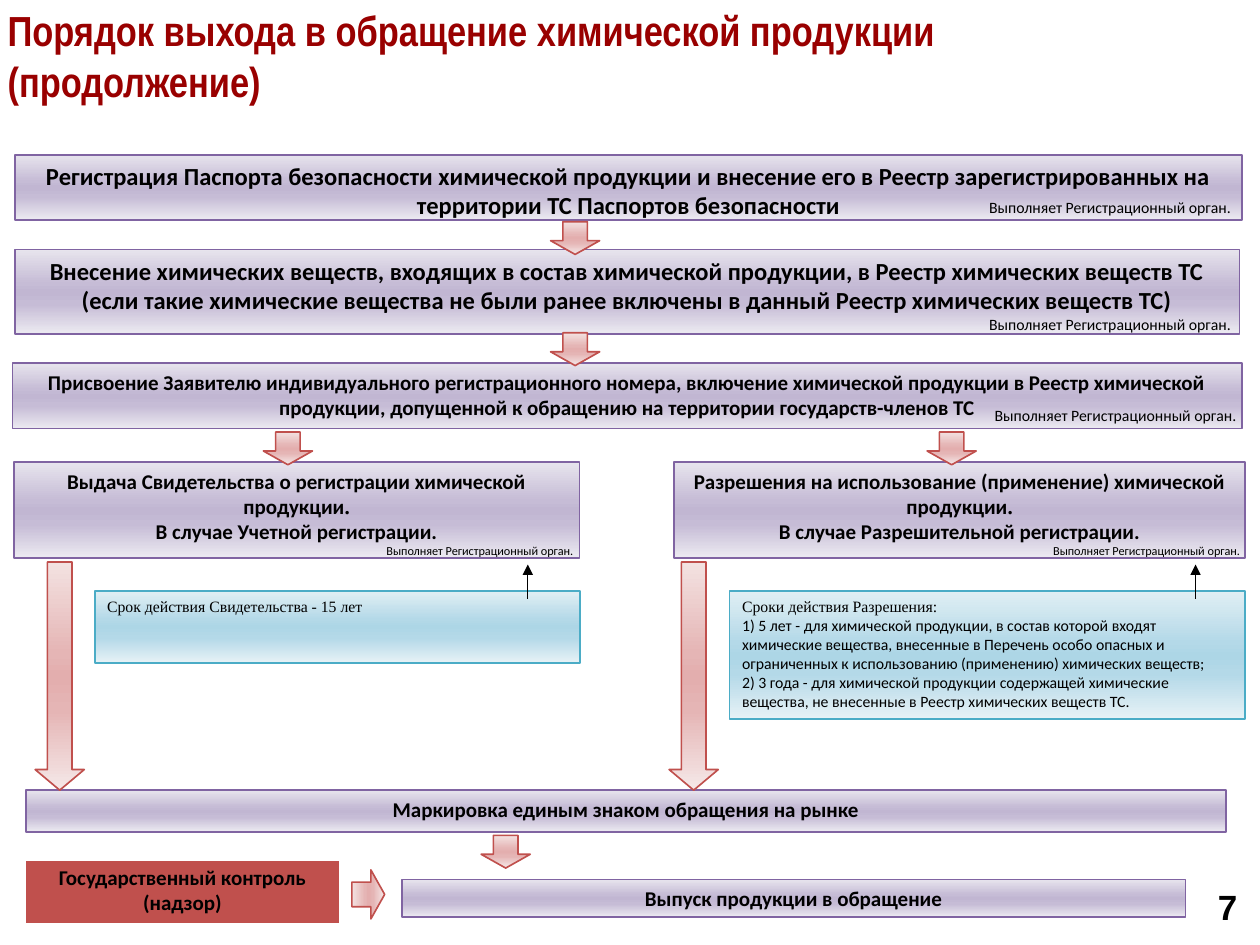
from lxml.etree import SubElement
from pptx import Presentation
from pptx.dml.color import RGBColor
from pptx.enum.shapes import MSO_CONNECTOR, MSO_SHAPE
from pptx.enum.text import MSO_ANCHOR, PP_ALIGN
from pptx.oxml.ns import qn
from pptx.util import Cm, Pt

COLORS = {
    "title": "990000", "text": "000000", "white": "FFFFFF",
    "purple": "8064A2", "red": "C0504D", "blue": "4BACC6",
}
GRADIENTS = {
    "purple": ["E7E4ED", "C6BCD6", "C1B6D2", "C6BCD6", "ECEAF1"],
    "red": ["F3E2E1", "E5B5B5", "E3AEAE", "E5B5B5", "F5E8E8"],
    "blue": ["E1EFF4", "B4D9E8", "ADD6E6", "B4D9E8", "E7F2F6"],
}
STOPS = [0, 40, 50, 65, 100]

deck = Presentation()
deck.slide_width, deck.slide_height = Cm(25.4), Cm(19.05)
page = deck.slides.add_slide(deck.slide_layouts[5])


def add_gradient_shape(kind, place, theme):
    """Add a preset shape with a vertical five-stop gradient and a matching outline."""
    shape = page.shapes.add_shape(kind, *[Cm(value) for value in place])
    shape.shadow.inherit = False
    shape.line.color.rgb = RGBColor.from_string(COLORS[theme])
    shape.line.width = Pt(0.94)
    shape.fill.gradient()
    shape.fill.gradient_angle = 270
    stop_list = shape._element.spPr.find(qn("a:gradFill")).find(qn("a:gsLst"))
    for old_stop in list(stop_list):
        stop_list.remove(old_stop)
    for position, color in zip(STOPS, GRADIENTS[theme]):
        stop = SubElement(stop_list, qn("a:gs"), pos=str(position * 1000))
        SubElement(stop, qn("a:srgbClr"), val=color)
    return shape


def write(shape, paragraphs, size, bold=False, align=PP_ALIGN.CENTER, after=0):
    """Fill a shape with paragraphs, each a list of (text, font name) runs."""
    frame = shape.text_frame
    frame.word_wrap = True
    frame.vertical_anchor = MSO_ANCHOR.TOP
    for index, runs in enumerate(paragraphs):
        para = frame.add_paragraph() if index else frame.paragraphs[0]
        para.alignment = align
        para.space_after = Pt(after)
        for text, font_name in runs:
            span = para.add_run()
            span.text = text
            span.font.name = font_name
            span.font.size = Pt(size)
            span.font.bold = bold
            span.font.color.rgb = RGBColor.from_string(COLORS["text"])


# Title
title = page.shapes.title
title.left, title.top, title.width, title.height = Cm(-0.1), Cm(-0.08), Cm(19.48), Cm(2.39)
title.text_frame.word_wrap = True
title.text_frame.vertical_anchor = MSO_ANCHOR.MIDDLE
para = title.text_frame.paragraphs[0]
para.alignment = PP_ALIGN.LEFT
for index, text in enumerate(["Порядок выхода в обращение химической продукции", "(продолжение)"]):
    if index:
        para.add_line_break()
    span = para.add_run()
    span.text = text
    span.font.name = "Arial Narrow"
    span.font.size = Pt(24)
    span.font.bold = True
    span.font.color.rgb = RGBColor.from_string(COLORS["title"])

# Steps of the procedure
steps = [
    ((0.3, 3.12, 24.74, 1.32), 14,
     "Регистрация Паспорта безопасности химической продукции и внесение его в Реестр "
     "зарегистрированных на территории ТС Паспортов безопасности"),
    ((0.3, 5.03, 24.69, 1.7), 14,
     "Внесение химических веществ, входящих в состав химической продукции, в Реестр "
     "химических веществ ТС (если такие химические вещества не были ранее включены в "
     "данный Реестр химических веществ ТС)"),
    ((0.25, 7.32, 24.79, 1.32), 12,
     "Присвоение Заявителю индивидуального регистрационного номера, включение химической "
     "продукции в Реестр химической продукции, допущенной к обращению на территории "
     "государств-членов ТС"),
    ((0.53, 15.93, 24.18, 0.84), 12, "Маркировка единым знаком обращения на рынке"),
    ((8.1, 17.73, 15.8, 0.76), 12, "Выпуск продукции в обращение"),
]
for place, size, text in steps:
    box = add_gradient_shape(MSO_SHAPE.FLOWCHART_PROCESS, place, "purple")
    write(box, [[(text, "Calibri")]], size, bold=True, after=10)

# Two registration outcomes
outcomes = [
    ((0.28, 9.32, 11.4, 1.93), "Выдача Свидетельства о регистрации химической продукции",
     "В случае Учетной регистрации."),
    ((13.59, 9.32, 11.51, 1.93), "Разрешения на использование (применение) химической продукции",
     "В случае Разрешительной регистрации."),
]
for place, document, case in outcomes:
    box = add_gradient_shape(MSO_SHAPE.FLOWCHART_PROCESS, place, "purple")
    write(box, [[(document, "Calibri"), (".", "Times New Roman")], [(case, "Calibri")]],
          12, bold=True)

# Validity periods
periods = [
    ((1.91, 11.91, 9.78, 1.45), [[("Срок действия Свидетельства - 15 лет", "Times New Roman")]]),
    ((14.71, 11.91, 10.39, 2.59), [
        [("Сроки действия Разрешения:", "Times New Roman")],
        [("1) 5 лет - для химической продукции, в состав которой входят химические вещества, "
          "внесенные в Перечень особо опасных и ограниченных к использованию (применению) "
          "химических веществ;", "Calibri")],
        [("2) 3 года - для химической продукции содержащей химические вещества, не внесенные "
          "в Реестр химических веществ ТС.", "Calibri")],
    ]),
]
for place, paragraphs in periods:
    note = add_gradient_shape(MSO_SHAPE.WAVE, place, "blue")
    note.adjustments[0] = 0
    note.adjustments[1] = 0
    write(note, paragraphs, 9, align=PP_ALIGN.LEFT)
    note.text_frame.paragraphs[0].alignment = PP_ALIGN.JUSTIFY

# State control
control = page.shapes.add_shape(MSO_SHAPE.FLOWCHART_PROCESS, Cm(0.48), Cm(17.3), Cm(6.4), Cm(1.37))
control.shadow.inherit = False
control.fill.solid()
control.fill.fore_color.rgb = RGBColor.from_string(COLORS["red"])
control.line.color.rgb = RGBColor.from_string(COLORS["white"])
control.line.width = Pt(3)
write(control, [[("Государственный контроль (надзор)", "Calibri")]], 12, bold=True, after=10)

# Who performs each step
for left, top, size in [(19.35, 3.86, 9), (19.35, 6.22, 9), (19.46, 8.05, 9),
                        (6.65, 10.82, 7), (20.09, 10.82, 7)]:
    performer = page.shapes.add_textbox(Cm(left), Cm(top), Cm(6.05), Cm(0.91))
    write(performer, [[("Выполняет Регистрационный орган.", "Calibri")]], size, after=10)

# Block arrows between steps
for left, top, height, rotation in [
    (11.1, 4.47, 0.66, 0), (11.1, 6.71, 0.66, 0), (5.31, 8.71, 0.66, 0), (18.69, 8.71, 0.66, 0),
    (0.71, 11.33, 4.6, 0), (13.49, 11.33, 4.6, 0), (9.7, 16.84, 0.66, 0), (6.93, 17.7, 0.66, 270),
]:
    arrow = add_gradient_shape(MSO_SHAPE.DOWN_ARROW, (left, top, 0.99, height), "red")
    arrow.adjustments[0] = 0.5
    arrow.adjustments[1] = 0.42
    arrow.rotation = rotation

# Thin arrows from validity periods to outcomes
for x in (10.64, 24.1):
    pointer = page.shapes.add_connector(MSO_CONNECTOR.STRAIGHT, Cm(x), Cm(12.07), Cm(x), Cm(11.38))
    pointer.line.color.rgb = RGBColor.from_string(COLORS["text"])
    pointer.line.width = Pt(0.75)
    SubElement(pointer.line._get_or_add_ln(), qn("a:tailEnd"), type="triangle")
    SubElement(pointer._element.spPr, qn("a:effectLst"))

# Page number
number = page.shapes.add_textbox(Cm(23.9), Cm(17.73), Cm(1.5), Cm(1.12))
number.text_frame.margin_left = Cm(0.65)
write(number, [[("7", "Arial")]], 20, bold=True, align=PP_ALIGN.LEFT)

deck.save("out.pptx")
